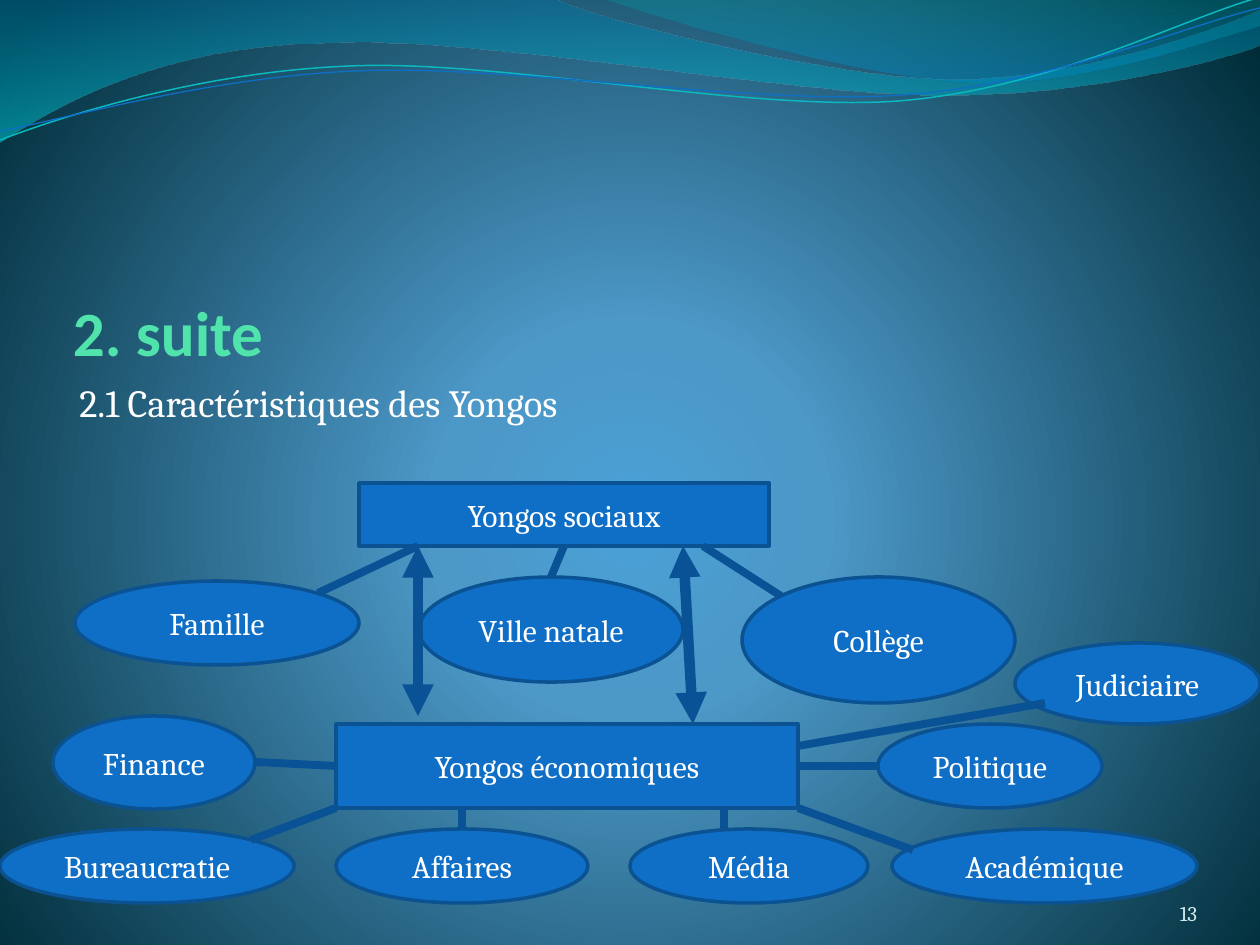
from dataclasses import dataclass
from pptx import Presentation
from pptx.dml.color import RGBColor
from pptx.enum.shapes import MSO_CONNECTOR, MSO_SHAPE
from pptx.enum.text import MSO_ANCHOR, PP_ALIGN
from pptx.oxml import parse_xml
from pptx.oxml.ns import qn
from pptx.util import Emu, Pt
from lxml.etree import SubElement

UNIT = 914400 / 126  # EMU in one px


@dataclass(frozen=True)
class Theme:
    head: str = "Calibri"
    body: str = "Cambria"
    node: str = "0F6FC6"
    edge: str = "0B5292"
    link: str = "095295"
    teal: str = "0AB8BF"
    title: str = "50E3AC"
    text: str = "FFFFFF"
    page: str = "D1EAEE"
    big: int = 36
    mid: int = 22
    base: int = 18
    small: int = 12
    back: tuple = ((0, "4AA0D6", 100), (25, "4C98C7", 100), (100, "002C38", 100))
    wave: tuple = ((0, "0074A1", 45), (100, "00C6CF", 55))
    crest: tuple = ((0, "00A1A9", 30), (80, "008BBF", 45))


T = Theme()
RECT, OVAL = MSO_SHAPE.RECTANGLE, MSO_SHAPE.OVAL
DOWN = '<a:lin ang="5400000" scaled="0"/>'
ROUND = '<a:path path="circle"><a:fillToRect l="10000" t="110000" r="10000" b="100000"/></a:path>'

# Waves: a pair is a straight step, six numbers are a curve step
WAVE = [(0, 0), (554, -1), (600, 21, 837, 79, 955, 79), (1075, 79, 1207, 33, 1260, 11),
        (1261, 45), (1239, 55, 1096, 96, 940, 95), (784, 95, 481, 35, 324, 43),
        (163, 45, 58, 105, -1, 142), (0, 0)]
CREST = [(604, -1), (641, 14, 859, 78, 969, 82), (1079, 87, 1211, 40, 1260, 26),
         (1260, 0), (604, -1)]
TEAL = [(0, 140), (60, 117, 199, 72, 349, 66), (498, 59, 747, 112, 898, 101),
        (1050, 89, 1182, 19, 1257, -2)]
BLUE = [(0, 131), (59, 121, 207, 77, 357, 71), (508, 64, 752, 106, 903, 95),
        (1053, 84, 1184, 26, 1260, 8)]

NODES = [
    ("Famille", OVAL, 75, 581, 284, 84),
    ("Ville natale", OVAL, 419, 577, 264, 105),
    ("Collège", OVAL, 742, 577, 273, 126),
    ("Yongos sociaux", RECT, 359, 483, 410, 63),
    ("Yongos économiques", RECT, 336, 724, 462, 84),
    ("Finance", OVAL, 53, 716, 202, 93),
    ("Politique", OVAL, 878, 724, 224, 84),
    ("Bureaucratie", OVAL, 0, 829, 294, 74),
    ("Affaires", OVAL, 336, 829, 252, 74),
    ("Média", OVAL, 630, 829, 238, 74),
    ("Académique", OVAL, 892, 829, 305, 74),
]
COURT = ("Judiciaire", OVAL, 1015, 643, 245, 81)

# Ends of each link, then the joined node and side at either end
LINKS = [
    (418, 546, 318, 593, None, None),
    (564, 546, 551, 577, ("Yongos sociaux", 2), ("Ville natale", 0)),
    (703, 546, 781, 596, None, None),
    (336, 766, 255, 762, ("Yongos économiques", 1), None),
    (798, 766, 878, 766, ("Yongos économiques", 3), None),
    (251, 840, 336, 808, None, None),
    (462, 808, 462, 829, None, ("Affaires", 0)),
    (724, 808, 724, 829, None, None),
    (798, 808, 913, 850, None, None),
]
ARROWS = [(683, 546, 693, 724), (418, 546, 418, 716)]


def px(*nums):
    return [Emu(round(n * UNIT)) for n in nums]


def rgb(code):
    return RGBColor.from_string(code)


def blend(host, stops, way):
    """Swap the solid fill inside host for a gradient."""
    marks = "".join(
        f'<a:gs pos="{pos * 1000}"><a:srgbClr val="{code}">'
        f'<a:alpha val="{alpha * 1000}"/></a:srgbClr></a:gs>'
        for pos, code, alpha in stops)
    grad = parse_xml(
        '<a:gradFill xmlns:a="http://schemas.openxmlformats.org/drawingml/2006/main" '
        f'rotWithShape="1"><a:gsLst>{marks}</a:gsLst>{way}</a:gradFill>')
    host.replace(host.find(qn("a:solidFill")), grad)


def draw(slide, steps, closed):
    """Build an outline, then bend each run of three points into a curve."""
    pts = [step[i:i + 2] for step in steps for i in range(0, len(step), 2)]
    pen = slide.shapes.build_freeform(*pts[0], scale=UNIT)
    pen.add_line_segments(pts[1:], close=closed)
    shape = pen.convert_to_shape()
    shape.shadow.inherit = False
    legs = iter(list(shape._element.iter(qn("a:lnTo"))))
    for step in steps[1:]:
        leg = next(legs)
        if len(step) == 6:
            leg.tag = qn("a:cubicBezTo")
            for _ in range(2):
                spare = next(legs)
                leg.append(spare[0])
                spare.getparent().remove(spare)
    return shape


def add_wave(slide, steps, stops):
    shape = draw(slide, steps, True)
    shape.line.fill.background()
    shape.fill.solid()
    blend(shape._element.spPr, stops, DOWN)


def add_curve(slide, steps, code, width):
    shape = draw(slide, steps, False)
    shape.fill.background()
    shape.line.color.rgb = rgb(code)
    shape.line.width = Pt(width)


def write(frame, text, font, size, code, align, anchor):
    frame.word_wrap = True
    frame.vertical_anchor = anchor
    par = frame.paragraphs[0]
    par.text = text
    par.alignment = align
    par.font.name, par.font.size = font, Pt(size)
    par.font.color.rgb = rgb(code)
    return par


def add_text(slide, box, inset, *style):
    frame = slide.shapes.add_textbox(*px(*box)).text_frame
    frame.margin_left = frame.margin_right = Pt(inset)
    frame.margin_top = frame.margin_bottom = Pt(inset)
    return write(frame, *style)


def add_node(slide, text, kind, *box):
    shape = slide.shapes.add_shape(kind, *px(*box))
    shape.shadow.inherit = False
    shape.fill.solid()
    shape.fill.fore_color.rgb = rgb(T.node)
    shape.line.color.rgb = rgb(T.edge)
    shape.line.width = Pt(2)
    write(shape.text_frame, text, T.body, T.base, T.text, PP_ALIGN.CENTER, MSO_ANCHOR.MIDDLE)
    return shape


def add_link(slide, ends, width=4.5, arrow=False):
    link = slide.shapes.add_connector(MSO_CONNECTOR.STRAIGHT, *px(*ends))
    link.line.color.rgb = rgb(T.link)
    link.line.width = Pt(width)
    if arrow:
        for tag in ("a:headEnd", "a:tailEnd"):
            SubElement(link.line._get_or_add_ln(), qn(tag), type="triangle")
    SubElement(link._element.spPr, qn("a:effectLst"))
    return link


def main():
    deck = Presentation()
    deck.slide_width, deck.slide_height = px(1260, 945)
    slide = deck.slides.add_slide(deck.slide_layouts[6])

    # Background and waves
    slide.background.fill.solid()
    blend(next(slide._element.iter(qn("p:bgPr"))), T.back, ROUND)
    add_wave(slide, WAVE, T.wave)
    add_wave(slide, CREST, T.crest)
    add_curve(slide, TEAL, T.teal, 0.85)
    add_curve(slide, BLUE, T.node, 0.75)

    # Title and heading
    title = add_text(slide, (73, 181, 1071, 188), 0, "2. suite", T.head, T.big,
                     T.title, PP_ALIGN.LEFT, MSO_ANCHOR.BOTTOM)
    title.font.bold = True
    lead = add_text(slide, (73, 373, 1071, 572), 3.6, "2.1 Caractéristiques des Yongos",
                    T.body, T.mid, T.text, PP_ALIGN.LEFT, MSO_ANCHOR.TOP)
    lead.space_before = Pt(4.4)

    # Network of nodes and links
    nodes = {node[0]: add_node(slide, *node) for node in NODES}
    for *ends, start, stop in LINKS:
        link = add_link(slide, ends)
        if start:
            link.begin_connect(nodes[start[0]], start[1])
        if stop:
            link.end_connect(nodes[stop[0]], stop[1])
    for ends in ARROWS:
        add_link(slide, ends, 6, True)
    add_node(slide, *COURT)
    add_link(slide, (798, 746, 1045, 703))

    # Page number
    add_text(slide, (1092, 876, 105, 50), 0, "13", T.body, T.small, T.page,
             PP_ALIGN.RIGHT, MSO_ANCHOR.BOTTOM)
    deck.save("out.pptx")


if __name__ == "__main__":
    main()
